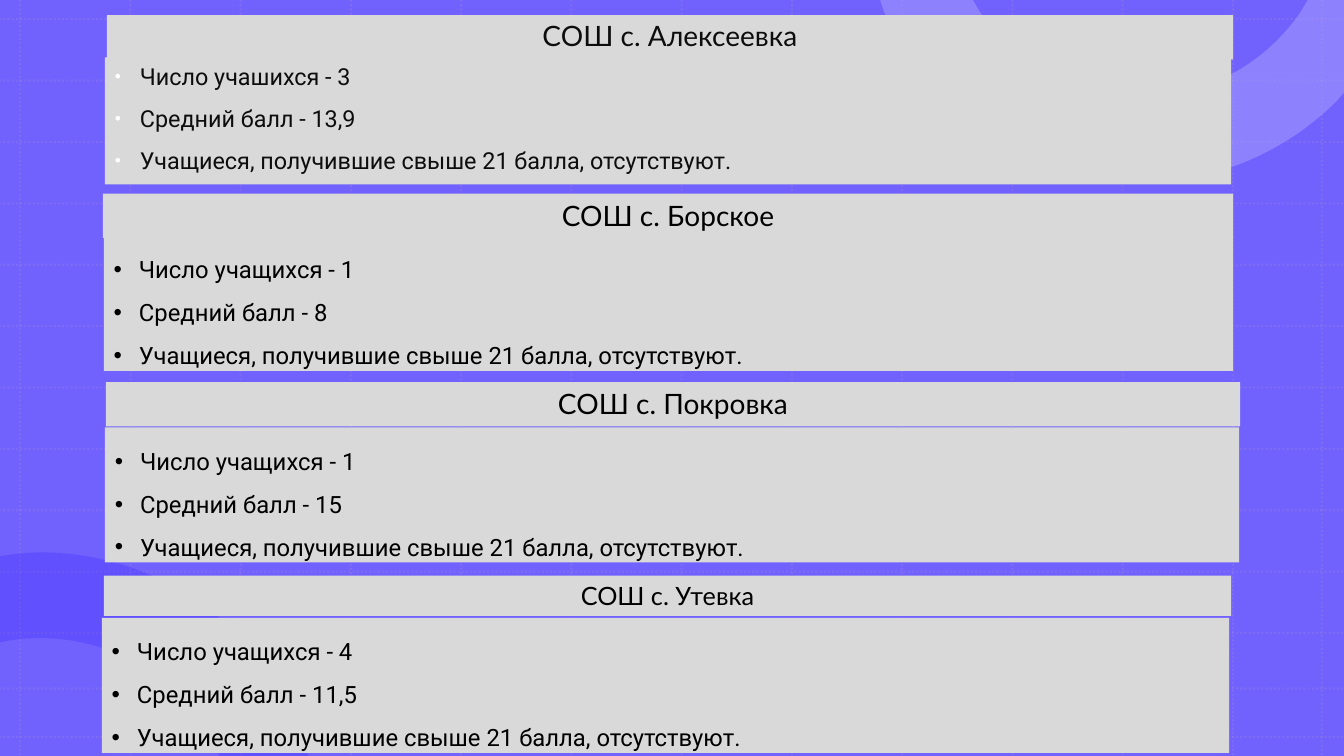
from lxml.etree import SubElement as Sub
from pptx import Presentation
from pptx.dml.color import RGBColor as RGB
from pptx.enum.dml import MSO_LINE as Dash
from pptx.enum.shapes import MSO_CONNECTOR as Conn, MSO_SHAPE as Shape
from pptx.enum.text import MSO_ANCHOR as Anchor, MSO_AUTO_SIZE as Auto, PP_ALIGN as Align
from pptx.oxml.ns import qn
from pptx.util import Inches, Pt

WIDE, HIGH = 13.33, 7.5
COLORS = {"back": "7162FE", "grid": "B495C2", "low": "220BFD", "top": "AAA1FE",
          "card": "D9D9D9", "soft": "0D0D0D", "text": "000000", "white": "FFFFFF"}
NOTE = "Учащиеся, получившие свыше 21 балла, отсутствуют."

# Ring outlines: a pair is a corner, three pairs are a curve
LOW = [(0.4, 5.48), ((1.64, 5.48), (2.69, 6.3), (3.03, 7.42)), (3.06, 7.5),
       (2.17, 7.5), (2.17, 7.49), ((1.88, 6.81), (1.2, 6.33), (0.4, 6.33)),
       ((0.27, 6.33), (0.14, 6.34), (0.02, 6.37)), (-0.01, 6.37),
       (-0.01, 5.52), (0.12, 5.5), ((0.21, 5.49), (0.31, 5.48), (0.4, 5.48))]
TOP = [(8.73, 0), (9.65, 0), (9.72, 0.12),
       ((10.07, 0.63), (10.65, 0.96), (11.31, 0.96)),
       ((11.97, 0.96), (12.55, 0.63), (12.9, 0.12)), (12.97, 0), (13.33, 0),
       (13.33, 0.92), (13.26, 1), ((12.76, 1.5), (12.07, 1.81), (11.31, 1.81)),
       ((10.17, 1.81), (9.19, 1.11), (8.77, 0.12))]

# School, head box, head size, list box, pupils line, mean score
FIRST = ("СОШ с. Алексеевка", (1.06, 0.15, 11.17, 0.44), 20,
         (1.04, 0.57, 11.17, 1.26), "Число учашихся - 3", "13,9")
OTHERS = [
    ("СОШ с. Борское", (1.02, 1.92, 11.21, 0.44), 20,
     (1.03, 2.34, 11.2, 1.34), "Число учащихся - 1", "8"),
    ("СОШ с. Покровка", (1.05, 3.79, 11.25, 0.44), 20,
     (1.04, 4.24, 11.25, 1.34), "Число учащихся - 1", "15"),
    ("СОШ с. Утевка", (1.03, 5.71, 11.18, 0.4), 18,
     (1.01, 6.13, 11.18, 1.34), "Число учащихся - 4", "11,5"),
]


def color(name):
    return RGB.from_string(COLORS[name])


def paint(shape, name):
    shape.shadow.inherit = False
    shape.fill.solid()
    shape.fill.fore_color.rgb = color(name)
    shape.line.fill.background()


def fade(props, percent):
    """Make a solid colour see-through."""
    tone = next(props.iter(qn("a:srgbClr")))
    Sub(tone, qn("a:alpha"), val=str(percent * 1000))


def rule(slide, x1, y1, x2, y2):
    line = slide.shapes.add_connector(Conn.STRAIGHT, *map(Inches, (x1, y1, x2, y2)))
    line.line.color.rgb = color("grid")
    line.line.width = Pt(1.5)
    line.line.dash_style = Dash.ROUND_DOT
    props = line._element.spPr
    fade(props, 20)
    Sub(props, qn("a:effectLst"))


def grid(slide, wide, high):
    for x in [0.2 + 1.0935 * i for i in range(12)] + [13.11]:
        rule(slide, x, 0, x, high)
    for y in [0.19 + 0.609 * i for i in range(11)] + [6.83, 7.31]:
        rule(slide, -0.01, y, wide, y)


def bend(steps):
    """Turn three straight steps into one curve."""
    curve = steps[0].makeelement(qn("a:cubicBezTo"))
    steps[0].addprevious(curve)
    for step in steps:
        curve.append(step[0])
        step.getparent().remove(step)


def ring(slide, outline, name, percent):
    parts = [part if len(part) == 3 else (part,) for part in outline]
    spots = [(Inches(x), Inches(y)) for part in parts for x, y in part]
    build = slide.shapes.build_freeform(*spots[0])
    build.add_line_segments(spots[1:], close=True)
    shape = build.convert_to_shape()
    steps = list(shape._element.iter(qn("a:lnTo")))
    for part in parts[1:]:
        if len(part) == 3:
            bend(steps[:3])
        steps = steps[len(part):]
    paint(shape, name)
    fade(shape._element.spPr, percent)


def write(para, text, font, size, name):
    run = para.add_run()
    run.text = text
    run.font.name = font
    run.font.size = Pt(size)
    run.font.color.rgb = color(name)


def panel(shape, box, anchor):
    shape.left, shape.top, shape.width, shape.height = map(Inches, box)
    paint(shape, "card")
    frame = shape.text_frame
    frame.word_wrap = True
    frame.auto_size = Auto.NONE
    frame.vertical_anchor = anchor
    return frame


def block(slide, box):
    shape = slide.shapes.add_shape(Shape.RECTANGLE, *map(Inches, box))
    return panel(shape, box, Anchor.TOP)


def head(frame, text, size, tone):
    para = frame.paragraphs[0]
    para.alignment = Align.CENTER
    write(para, text, "Lato", size, tone)
    return para


def bullet(para, pale):
    props = para._p.get_or_add_pPr()
    props.set("marL", str(Inches(0.25)))
    props.set("indent", str(-Inches(0.25)))
    if pale:
        Sub(Sub(props, qn("a:buClr")), qn("a:srgbClr"), val=COLORS["white"])
        Sub(props, qn("a:buSzPct"), val="75000")
    Sub(props, qn("a:buFont"), typeface="Arial")
    Sub(props, qn("a:buChar"), char="•")


def facts(slide, box, pupils, score, pale=False):
    frame = block(slide, box)
    for i, text in enumerate([pupils, f"Средний балл - {score}", NOTE]):
        para = frame.add_paragraph() if i else frame.paragraphs[0]
        para.alignment = Align.LEFT
        bullet(para, pale)
        if not pale:
            para.line_spacing = 1.5
        elif i:
            para.space_before = Pt(10)
        write(para, text, "Roboto", 16.7 if pale else 17, "soft" if pale else "text")


def lead(slide, name, top, size, box, pupils, score):
    """First school: its name is the slide title."""
    title = slide.shapes.title
    slide.shapes._spTree.append(title._element)  # in front of the rings
    frame = panel(title, top, Anchor.MIDDLE)
    head(frame, name, size, "soft").line_spacing = 0.9
    facts(slide, box, pupils, score, pale=True)


def school(slide, name, top, size, box, pupils, score):
    head(block(slide, top), name, size, "text")
    facts(slide, box, pupils, score)


def backdrop(slide, wide, high):
    slide.background.fill.solid()
    slide.background.fill.fore_color.rgb = color("card")
    sheet = slide.shapes.add_shape(Shape.RECTANGLE, 0, 0, Inches(wide), Inches(high))
    paint(sheet, "back")
    grid(slide, wide, high)
    ring(slide, LOW, "low", 20)
    ring(slide, TOP, "top", 50)


def main():
    deck = Presentation()
    deck.slide_width, deck.slide_height = Inches(WIDE), Inches(HIGH)
    slide = deck.slides.add_slide(deck.slide_layouts[5])
    backdrop(slide, WIDE, HIGH)
    lead(slide, *FIRST)
    for row in OTHERS:
        school(slide, *row)
    deck.save("out.pptx")


if __name__ == "__main__":
    main()
